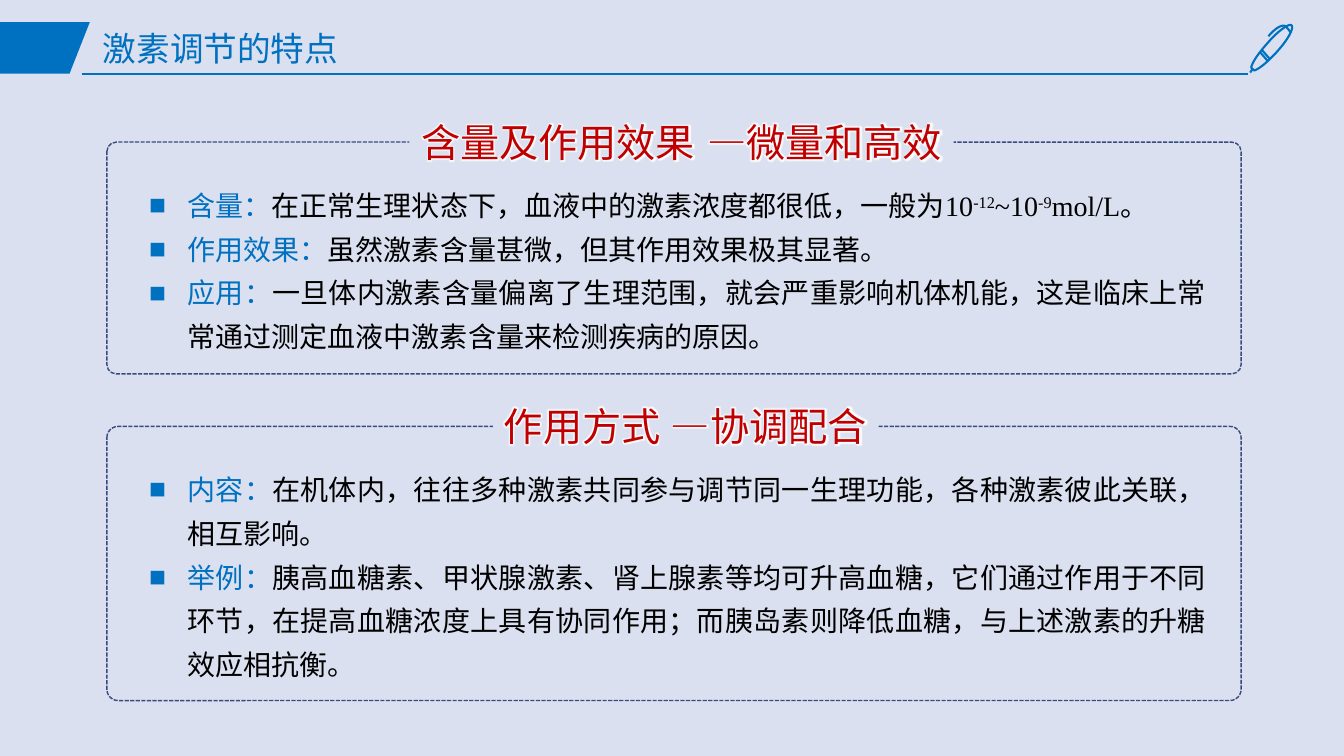
from lxml import etree
from pptx import Presentation
from pptx.dml.color import RGBColor
from pptx.enum.dml import MSO_LINE
from pptx.enum.shapes import MSO_CONNECTOR, MSO_SHAPE
from pptx.enum.text import MSO_ANCHOR, MSO_AUTO_SIZE, PP_ALIGN
from pptx.oxml.ns import qn
from pptx.util import Inches, Pt

RECTANGLE = MSO_SHAPE.RECTANGLE
ROUNDED = MSO_SHAPE.ROUNDED_RECTANGLE
STRAIGHT = MSO_CONNECTOR.STRAIGHT
DASH = MSO_LINE.SQUARE_DOT
LEFT, CENTER, JUSTIFY = PP_ALIGN.LEFT, PP_ALIGN.CENTER, PP_ALIGN.JUSTIFY
MIDDLE, TOP = MSO_ANCHOR.MIDDLE, MSO_ANCHOR.TOP
NO_AUTOFIT = MSO_AUTO_SIZE.NONE
TWO_CONTENT_LAYOUT = 3

BLUE, NAVY, RED = "0070C0", "374B7F", "C00000"
BLACK, WHITE, BACKGROUND = "000000", "FFFFFF", "DAE0EF"

# Each panel: top, height, headings (text, left, width), items (label, runs);
# every second run of an item is superscript.
PANELS = [
    (1.41, 2.3,
     [("含量及作用效果", 4.06, 2.95), ("—微量和高效", 6.9, 2.56)],
     [("含量：", ["在正常生理状态下，血液中的激素浓度都很低，一般为10",
               "-12", "~10", "-9", "mol/L。"]),
      ("作用效果：", ["虽然激素含量甚微，但其作用效果极其显著。"]),
      ("应用：", ["一旦体内激素含量偏离了生理范围，就会严重影响机体机能，"
               "这是临床上常常通过测定血液中激素含量来检测疾病的原因。"])]),
    (4.23, 2.72,
     [("作用方式", 4.89, 1.77), ("—协调配合", 6.54, 2.17)],
     [("内容：", ["在机体内，往往多种激素共同参与调节同一生理功能，"
               "各种激素彼此关联，相互影响。"]),
      ("举例：", ["胰高血糖素、甲状腺激素、肾上腺素等均可升高血糖，"
               "它们通过作用于不同环节，在提高血糖浓度上具有协同作用；"
               "而胰岛素则降低血糖，与上述激素的升糖效应相抗衡。"])]),
]

# Strokes of the pen: a start point, then Bezier triples or single line points.
PEN_STROKES = [
    [(12.57, 0.6), [(12.5, 0.52)]],
    [(12.52, 0.5), [(12.59, 0.58)]],
    [(12.81, 0.25),
     [(12.79, 0.23), (12.68, 0.3), (12.57, 0.43)],
     [(12.48, 0.53), (12.42, 0.62), (12.41, 0.67)],
     [(12.44, 0.7)],
     [(12.48, 0.69), (12.57, 0.62), (12.66, 0.52)],
     [(12.77, 0.4), (12.84, 0.28), (12.81, 0.25)]],
    [(12.42, 0.69), [(12.4, 0.72)]],
    [(12.8, 0.32),
     [(12.8, 0.32), (12.78, 0.29), (12.75, 0.26)],
     [(12.75, 0.26), (12.7, 0.22), (12.58, 0.36)]],
]
CURVE_STEPS = 8


def color(value):
    return RGBColor.from_string(value)


def apply_format(target, values):
    for name, value in values.items():
        setattr(target, name, value)


def to_emu(points):
    return [(Inches(x), Inches(y)) for x, y in points]


def flatten_stroke(start, segments):
    """Turn a stroke into the points of a polyline."""
    points = [start]
    for segment in segments:
        if len(segment) == 1:
            points += segment
            continue
        corners = [points[-1], *segment]
        for step in range(1, CURVE_STEPS + 1):
            t = step / CURVE_STEPS
            weights = [(1 - t) ** 3, 3 * t * (1 - t) ** 2, 3 * t * t * (1 - t), t ** 3]
            points.append(tuple(
                sum(weight * corner[axis] for weight, corner in zip(weights, corners))
                for axis in (0, 1)))
    return points


class SlideBuilder:
    """Holds the text style and the slide being built."""

    font_name = "Times New Roman"

    def __init__(self, slide):
        self.slide = slide
        self.shapes = slide.shapes
        fill = slide.background.fill
        fill.solid()
        fill.fore_color.rgb = color(BACKGROUND)

    def place(self, shape, left, top, width, height):
        apply_format(shape, {"left": Inches(left), "top": Inches(top),
                             "width": Inches(width), "height": Inches(height)})

    def paint(self, shape, fill=None, line=None, width=1.0):
        shape.shadow.inherit = False
        for paint_format, value in ((shape.fill, fill), (shape.line.fill, line)):
            if value is None:
                paint_format.background()
            else:
                paint_format.solid()
                paint_format.fore_color.rgb = color(value)
        if line:
            shape.line.width = Pt(width)

    def run(self, paragraph, text, size, text_color):
        run = paragraph.add_run()
        run.text = text
        apply_format(run.font, {"size": Pt(size), "name": self.font_name, "bold": False})
        run.font.color.rgb = color(text_color)
        return run

    def title(self, text):
        title = self.shapes.title
        self.place(title, 0.92, 0.21, 11.5, 0.59)
        apply_format(title.text_frame, {"vertical_anchor": MIDDLE, "auto_size": NO_AUTOFIT})
        paragraph = title.text_frame.paragraphs[0]
        apply_format(paragraph, {"alignment": LEFT, "line_spacing": 0.9})
        self.run(paragraph, text, 24, BLUE)

    def outline(self, strokes, closed=False, **paint):
        builder = None
        for points in map(to_emu, strokes):
            if builder is None:
                builder = self.shapes.build_freeform(*points[0])
            else:
                builder.move_to(*points[0])
            builder.add_line_segments(points[1:], close=closed)
        self.paint(builder.convert_to_shape(), **paint)

    def rule(self, left, right, top):
        line = self.shapes.add_connector(
            STRAIGHT, Inches(left), Inches(top), Inches(right), Inches(top))
        line.line.color.rgb = color(BLUE)
        line.line.width = Pt(1.5)
        etree.SubElement(line._element.spPr, qn("a:effectLst"))

    def frame(self, left, top, width, height):
        frame = self.shapes.add_shape(ROUNDED, 0, 0, 0, 0)
        self.place(frame, left, top, width, height)
        frame.adjustments[0] = 0.041
        self.paint(frame, line=NAVY)
        frame.line.dash_style = DASH

    def heading(self, text, left, top, width):
        box = self.shapes.add_shape(RECTANGLE, 0, 0, 0, 0)
        self.place(box, left, top, width, 0.57)
        self.paint(box, fill=BACKGROUND)
        apply_format(box.text_frame, {"word_wrap": False, "vertical_anchor": TOP})
        paragraph = box.text_frame.paragraphs[0]
        paragraph.alignment = CENTER
        self.glow(self.run(paragraph, text, 28, RED))

    def glow(self, run):
        """Put a white glow behind the letters."""
        effects = etree.Element(qn("a:effectLst"))
        glow = etree.SubElement(effects, qn("a:glow"), rad=str(Pt(5)))
        etree.SubElement(glow, qn("a:srgbClr"), val=WHITE)
        run.font._element.find(qn("a:solidFill")).addnext(effects)

    def bullet(self, paragraph):
        properties = paragraph._p.get_or_add_pPr()
        indent = Inches(0.38)
        properties.set("marL", str(indent))
        properties.set("indent", str(-indent))
        bullet_color = etree.SubElement(properties, qn("a:buClr"))
        etree.SubElement(bullet_color, qn("a:srgbClr"), val=BLUE)
        etree.SubElement(properties, qn("a:buFont"), typeface=self.font_name)
        etree.SubElement(properties, qn("a:buChar"), char="■")

    def bullet_list(self, placeholder, items, left, top, width, height):
        self.place(placeholder, left, top, width, height)
        text_frame = placeholder.text_frame
        apply_format(text_frame, {"auto_size": NO_AUTOFIT, "word_wrap": True})
        for index, (label, texts) in enumerate(items):
            paragraph = text_frame.add_paragraph() if index else text_frame.paragraphs[0]
            apply_format(paragraph, {"alignment": JUSTIFY, "line_spacing": 1.3,
                                     "space_before": Pt(0), "space_after": Pt(0)})
            self.bullet(paragraph)
            self.run(paragraph, label, 20, BLUE)
            for position, text in enumerate(texts):
                run = self.run(paragraph, text, 20, BLACK)
                if position % 2:
                    run.font._element.set("baseline", "30000")


def main():
    presentation = Presentation()
    apply_format(presentation, {"slide_width": Inches(13.33), "slide_height": Inches(7.5)})
    layout = presentation.slide_layouts[TWO_CONTENT_LAYOUT]
    slide = presentation.slides.add_slide(layout)
    builder = SlideBuilder(slide)

    builder.title("激素调节的特点")
    builder.outline([[(0, 0.22), (0.89, 0.22), (0.69, 0.73), (0, 0.73)]],
                    closed=True, fill=BLUE)
    builder.rule(0.81, 12.38, 0.73)
    builder.outline([flatten_stroke(start, segments) for start, *segments in PEN_STROKES],
                    line=BLUE, width=1.5)

    for number, (top, height, headings, items) in enumerate(PANELS, start=1):
        builder.frame(1.06, top, 11.25, height)
        builder.bullet_list(slide.placeholders[number], items,
                            1.38, top + 0.31, 10.68, height - 0.48)
        for text, left, width in headings:
            builder.heading(text, left, top - 0.29, width)

    presentation.save("out.pptx")


if __name__ == "__main__":
    main()
